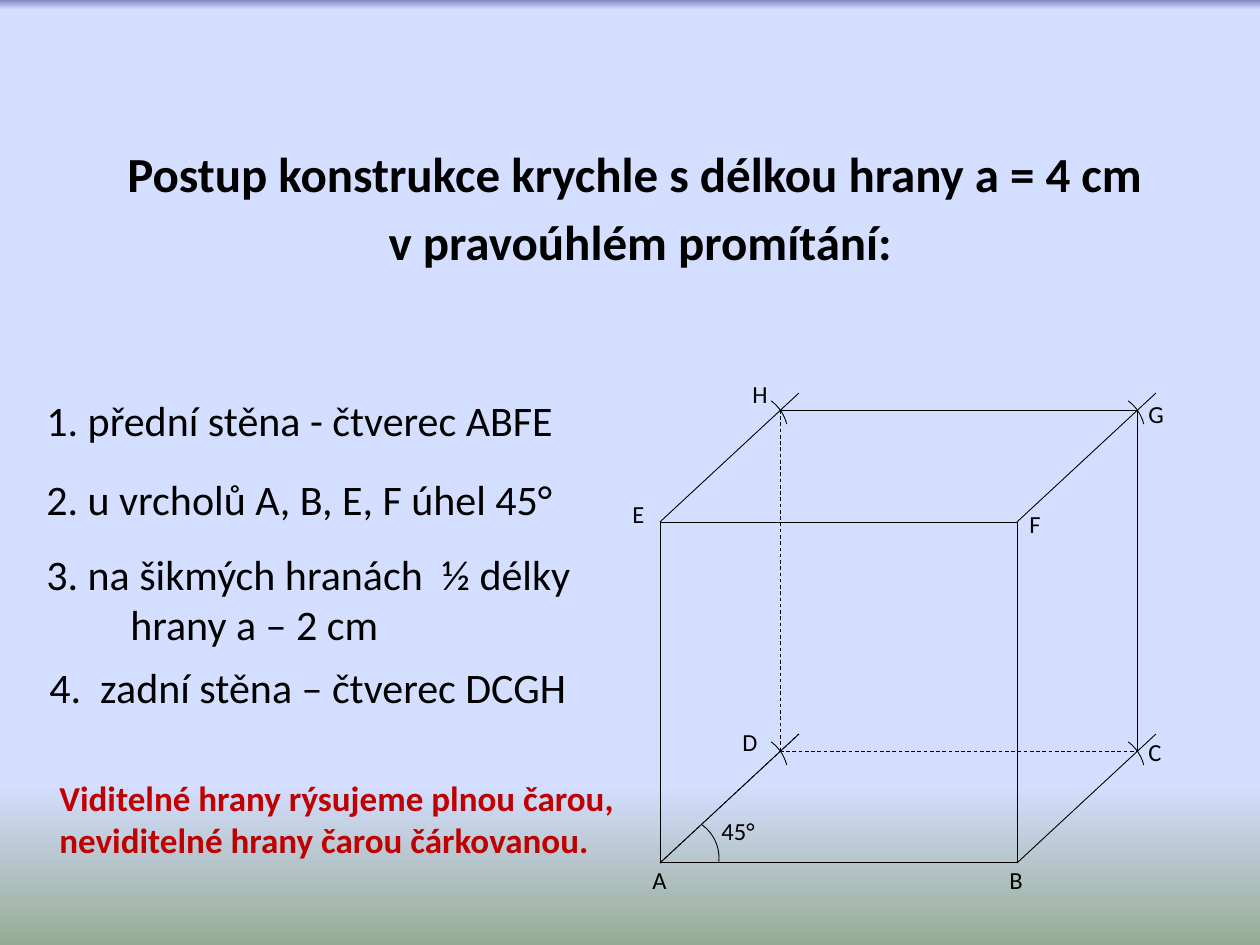
from dataclasses import dataclass
from math import cos, radians, sin

from lxml import etree
from pptx import Presentation
from pptx.dml.color import RGBColor
from pptx.enum.dml import MSO_LINE
from pptx.enum.shapes import MSO_CONNECTOR, MSO_SHAPE
from pptx.enum.text import MSO_ANCHOR, MSO_AUTO_SIZE, PP_ALIGN
from pptx.oxml import parse_xml
from pptx.oxml.ns import qn
from pptx.util import Emu, Pt

STRAIGHT, RECTANGLE, DASH = MSO_CONNECTOR.STRAIGHT, MSO_SHAPE.RECTANGLE, MSO_LINE.DASH
TOP, NO_FIT = MSO_ANCHOR.TOP, MSO_AUTO_SIZE.NONE
LEFT, CENTER = PP_ALIGN.LEFT, PP_ALIGN.CENTER

BLACK = RGBColor(0x00, 0x00, 0x00)
RED = RGBColor(0xC0, 0x00, 0x00)
BACKGROUND_STOPS = [
    (0, RGBColor(0x84, 0x88, 0xC4)),
    (1, RGBColor(0xD4, 0xDE, 0xFF)),
    (83, RGBColor(0xD4, 0xDE, 0xFF)),
    (100, RGBColor(0x96, 0xAB, 0x94)),
]
FONT = "Calibri"
THIN = Pt(0.5)
EMU_PER_PX = 914400 / 126
HANGING = 84  # px


@dataclass
class Note:
    text: str
    x: int
    y: int
    width: int
    height: int


@dataclass
class Edge:
    start: tuple[int, int]
    end: tuple[int, int]
    dashed: bool = False


@dataclass
class Arc:
    center: tuple[int, int]
    first: int  # degrees, counter-clockwise from the right
    last: int


def px(length: int) -> Emu:
    return Emu(round(length * EMU_PER_PX))


def shift(point: tuple[int, int], dx: int, dy: int) -> tuple[int, int]:
    return point[0] + dx, point[1] + dy


def write_text(shape, text: str, *, size: int, color=BLACK, bold=False, align=LEFT,
               hanging=0, spaced=False, wrap=True) -> None:
    frame = shape.text_frame
    frame.word_wrap = wrap
    frame.auto_size = NO_FIT
    frame.vertical_anchor = TOP
    frame.text = text
    for paragraph in frame.paragraphs:
        paragraph.alignment = align
        if spaced:
            paragraph.space_before = Pt(size * 0.2)
        if hanging:
            properties = paragraph._p.get_or_add_pPr()
            properties.set("marL", str(px(hanging)))
            properties.set("indent", str(-px(hanging)))
        font = paragraph.runs[0].font
        font.name, font.size, font.bold = FONT, Pt(size), bold
        font.color.rgb = color


def add_note(slide, note: Note, **text_format) -> None:
    box = slide.shapes.add_textbox(px(note.x), px(note.y), px(note.width), px(note.height))
    write_text(box, note.text, **text_format)


def draw_outline(line) -> None:
    line.color.rgb = BLACK
    line.width = THIN


def draw_edge(slide, edge: Edge) -> None:
    connector = slide.shapes.add_connector(
        STRAIGHT, *(px(value) for value in edge.start + edge.end))
    draw_outline(connector.line)
    if edge.dashed:
        connector.line.dash_style = DASH
    etree.SubElement(connector._element.spPr, qn("a:effectLst"))


def draw_arc(slide, arc: Arc, radius: int = 41, steps: int = 12) -> None:
    points = []
    for step in range(steps + 1):
        angle = radians(arc.first + (arc.last - arc.first) * step / steps)
        points.append((px(arc.center[0] + radius * cos(angle)),
                       px(arc.center[1] - radius * sin(angle))))
    builder = slide.shapes.build_freeform(*points[0])
    builder.add_line_segments(points[1:], close=False)
    curve = builder.convert_to_shape()
    curve.fill.background()
    curve.shadow.inherit = False
    draw_outline(curve.line)


def paint_background(slide) -> None:
    fill = slide.background.fill
    fill.gradient()
    fill.gradient_angle = 270
    stop_list = slide.background._cSld.find(".//" + qn("a:gsLst"))
    for stop in list(stop_list):
        stop_list.remove(stop)
    for percent, color in BACKGROUND_STOPS:
        stop_list.append(parse_xml(
            '<a:gs xmlns:a="http://schemas.openxmlformats.org/drawingml/2006/main" '
            f'pos="{percent * 1000}"><a:srgbClr val="{color}"/></a:gs>'))


# Cube corners: the back face is the front one moved along the depth
A, B, E, F = (660, 863), (1017, 863), (660, 522), (1017, 522)
D, C, H, G = (shift(corner, 120, -112) for corner in (A, B, E, F))

EDGES = [
    *(Edge(corner, shift(corner, 139, -129)) for corner in (A, E, F, B)),
    Edge(H, D, dashed=True),
    Edge(G, C),
    Edge(D, C, dashed=True),
    Edge(H, G),
    Edge(A, shift(A, 139, -129), dashed=True),
]
ARCS = [Arc((678, 858), -5, 54)]
ARCS += [Arc(shift(corner, -33, 24), 14, 54) for corner in (D, H, C, G)]

STEPS = [
    Note("1. přední stěna - čtverec ABFE", 34, 388, 546, 69),
    Note("2. u vrcholů A, B, E, F úhel 45°", 34, 467, 566, 59),
    Note("3. na šikmých hranách  ½ délky hrany a – 2 cm", 34, 542, 566, 100),
    Note("4.  zadní stěna – čtverec DCGH", 37, 655, 563, 73),
]
CORNER_LABELS = {
    "A": (640, 859), "B": (997, 859), "D": (730, 721), "C": (1136, 731),
    "H": (740, 373), "G": (1136, 393), "F": (1017, 503), "E": (620, 493),
}


def main() -> None:
    presentation = Presentation()
    presentation.slide_width, presentation.slide_height = px(1260), px(945)
    slide = presentation.slides.add_slide(presentation.slide_layouts[5])
    paint_background(slide)

    # Title
    title = slide.shapes.title
    title.left, title.top, title.width, title.height = px(94), px(137), px(1081), px(127)
    write_text(title, "Postup konstrukce krychle s délkou hrany a = 4 cm\n v pravoúhlém promítání:",
               size=28, bold=True, align=CENTER, spaced=True)

    # Construction steps
    for step in STEPS:
        add_note(slide, step, size=24, hanging=HANGING, spaced=True)

    # Cube
    front_face = slide.shapes.add_shape(
        RECTANGLE, px(E[0]), px(E[1]), px(B[0] - E[0]), px(B[1] - E[1]))
    front_face.fill.background()
    front_face.shadow.inherit = False
    draw_outline(front_face.line)
    for edge in EDGES:
        draw_edge(slide, edge)
    for arc in ARCS:
        draw_arc(slide, arc)

    # Labels of the angle and the corners
    add_note(slide, Note("45°", 709, 810, 79, 39), size=14)
    for letter, (x, y) in CORNER_LABELS.items():
        add_note(slide, Note(letter, x, y, 39, 39), size=14)

    # Rule for visible and hidden edges
    add_note(slide, Note("Viditelné hrany rýsujeme plnou čarou,\nneviditelné hrany čarou čárkovanou.",
                         47, 770, 592, 97), size=20, color=RED, bold=True, wrap=False)

    presentation.save("out.pptx")


if __name__ == "__main__":
    main()
